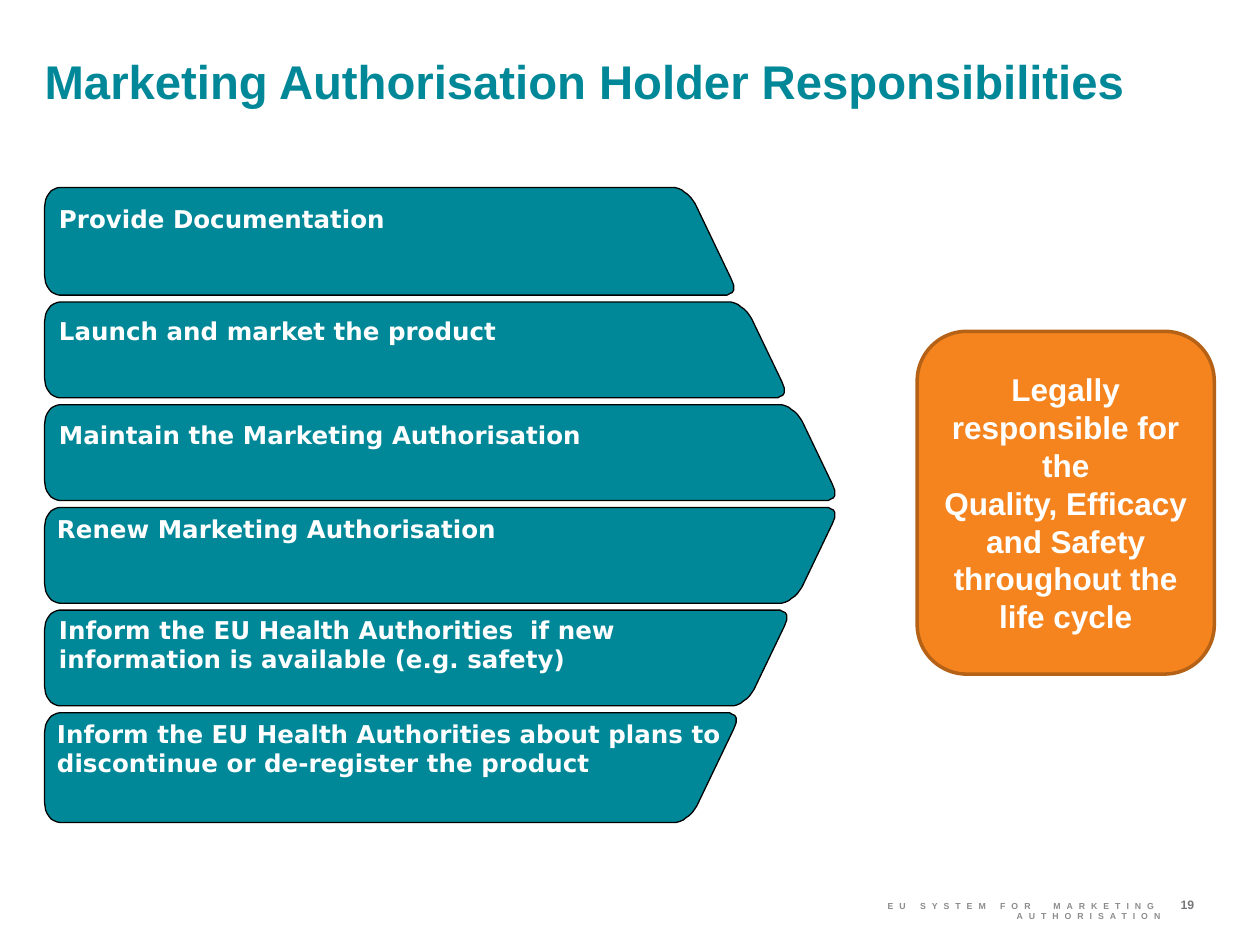
from pptx import Presentation
from pptx.dml.color import RGBColor
from pptx.enum import shapes, text
from pptx.util import Cm, Pt

TEAL = RGBColor(0x00, 0x88, 0x98)
ORANGE = RGBColor(0xF5, 0x84, 0x1F)
BROWN = RGBColor(0xB5, 0x62, 0x17)
WHITE = RGBColor(0xFF, 0xFF, 0xFF)
BLACK = RGBColor(0x00, 0x00, 0x00)
FOOTER_GREY = RGBColor(0x8C, 0x8C, 0x8C)
NUMBER_GREY = RGBColor(0x77, 0x78, 0x7B)

LEFT, FIRST_TOP, GAP = 0.9, 3.78, 0.14
SLOPE = 0.48  # run of the slanted end per unit of height

# Rounded corners in cm: x from the corner, y from the nearest long side
BACK = [(0.3, 0), (0.25, 0.01), (0.18, 0.04), (0.13, 0.07), (0.09, 0.12),
        (0.05, 0.18), (0.02, 0.25), (0.01, 0.32), (0, 0.39)]
TOE = [(-0.18, 0), (-0.13, 0), (-0.08, 0.03), (-0.03, 0.05), (0, 0.1),
       (0, 0.16), (0, 0.2), (-0.03, 0.28), (-0.05, 0.33)]
SHOULDER = [(0, 0.33), (-0.04, 0.27), (-0.09, 0.2), (-0.15, 0.14), (-0.21, 0.1),
            (-0.27, 0.05), (-0.34, 0.02), (-0.41, 0), (-0.47, 0)]

# Height, right end, slants upward, wording, label box (None: text in the bar)
BARS = [
    (2.17, 14.79, False, "Provide Documentation", (4.11, 11.58, 0.6)),
    (1.93, 15.81, False, "Launch and market the product", (6.38, 13.61, 0.6)),
    (1.93, 16.83, False, "Maintain the Marketing Authorisation", (8.46, 14, 0.6)),
    (1.93, 16.83, True, "Renew Marketing Authorisation", None),
    (1.93, 15.86, True, "Inform the EU Health Authorities  if new information "
     "is available (e.g. safety)", (12.4, 12.98, 1.19)),
    (2.21, 14.84, True, "Inform the EU Health Authorities about plans to "
     "discontinue or de-register the product", None),
]


def write(frame, lines, size, color, font="Arial", align=text.PP_ALIGN.LEFT):
    frame.word_wrap = True
    for i, line in enumerate(lines):
        paragraph = frame.paragraphs[0] if i == 0 else frame.add_paragraph()
        paragraph.alignment = align
        run = paragraph.add_run()
        run.text = line
        run.font.color.rgb = color
        style = {"size": Pt(size), "name": font, "bold": True}
        for key, value in style.items():
            setattr(run.font, key, value)


def add_label(left, top, width, height, wording, size, color, **style):
    """Add a text box without margins and return its text frame."""
    frame = slide.shapes.add_textbox(Cm(left), Cm(top), Cm(width), Cm(height)).text_frame
    for side in ("left", "top", "right", "bottom"):
        setattr(frame, f"margin_{side}", 0)
    write(frame, [wording], size, color, **style)
    return frame


deck = Presentation()
deck.slide_width, deck.slide_height = Cm(25.4), Cm(19.05)
slide = deck.slides.add_slide(deck.slide_layouts[6])

title = add_label(LEFT, 0.91, 24.05, 1.45,
                  "Marketing Authorisation Holder Responsibilities", 27, TEAL)
title.vertical_anchor = text.MSO_ANCHOR.MIDDLE

top = FIRST_TOP
for height, right, upward, wording, label_box in BARS:
    slope_top = right - 0.05 - SLOPE * (height - 0.66)
    outline = [(LEFT + x, y) for x, y in BACK]
    outline += [(LEFT + x, height - y) for x, y in reversed(BACK)]
    outline += [(right + x, height - y) for x, y in TOE]
    outline += [(slope_top + x, y) for x, y in SHOULDER]
    points = [(Cm(x), Cm(top + (height - y if upward else y))) for x, y in outline]

    builder = slide.shapes.build_freeform(*points[0])
    builder.add_line_segments(points[1:], close=True)
    bar = builder.convert_to_shape()
    bar.shadow.inherit = False
    bar.fill.solid()
    bar.fill.fore_color.rgb = TEAL
    bar.line.color.rgb = BLACK
    bar.line.width = Pt(0.75)
    if label_box:
        label_top, label_width, label_height = label_box
        add_label(1.19, label_top, label_width, label_height, wording, 14, WHITE,
                  font="DejaVu Sans")
    else:
        bar.text_frame.vertical_anchor = text.MSO_ANCHOR.TOP
        write(bar.text_frame, [wording], 14, WHITE, font="DejaVu Sans")
    top += height + GAP

duty = slide.shapes.add_shape(shapes.MSO_SHAPE.ROUNDED_RECTANGLE,
                              Cm(18.49), Cm(6.68), Cm(5.99), Cm(6.91))
duty.shadow.inherit = False
duty.fill.solid()
duty.fill.fore_color.rgb = ORANGE
duty.line.color.rgb = BROWN
duty.line.width = Pt(2)
duty.text_frame.vertical_anchor = text.MSO_ANCHOR.MIDDLE
write(duty.text_frame,
      ["Legally responsible for the",
       "Quality, Efficacy and Safety throughout the life cycle"],
      18, WHITE, align=text.PP_ALIGN.CENTER)

footer = add_label(15.6, 18.16, 7.8, 0.41, "EU SYSTEM FOR  MARKETING AUTHORISATION",
                   5, FOOTER_GREY, align=text.PP_ALIGN.RIGHT)
footer.paragraphs[0].runs[0].font._element.set("spc", "340")
add_label(23.8, 18.08, 1.35, 0.64, "19", 7, NUMBER_GREY)

deck.save("out.pptx")
